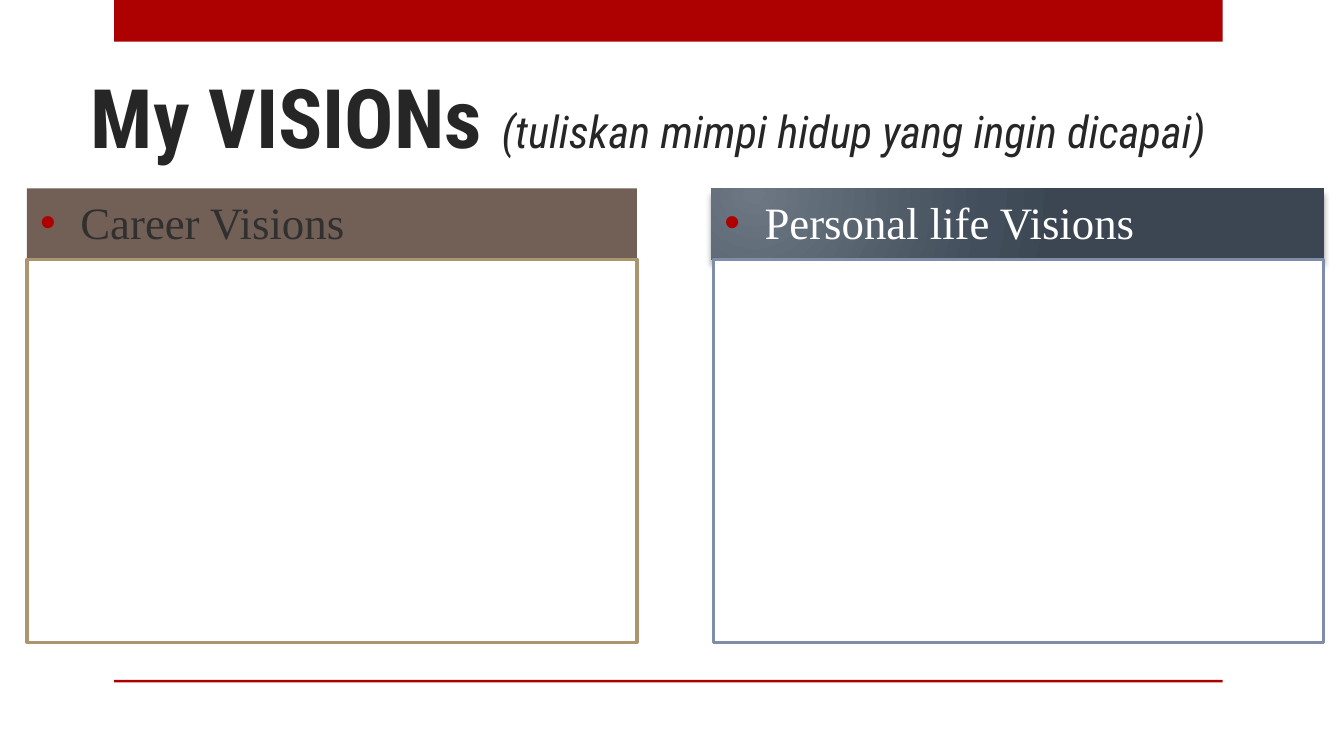
from pptx import Presentation
from pptx.dml.color import RGBColor
from pptx.enum.shapes import MSO_SHAPE as Shape
from pptx.enum.text import MSO_ANCHOR as Anchor, PP_ALIGN as Align
from pptx.oxml import parse_xml
from pptx.oxml.ns import nsdecls
from pptx.util import Cm, Pt

THEME = {
    "accent": "AD0101", "ink": "262626", "paper": "FFFFFF",
    "title_font": "Roboto Condensed", "body_font": "Times New Roman",
    "title_size": 44, "body_size": 24, "border": 1.75,
}

TITLE = [
    ("My VISIONs ", {"size": Pt(THEME["title_size"]), "bold": True}),
    ("(tuliskan mimpi hidup yang ingin dicapai)",
     {"size": Pt(THEME["body_size"]), "italic": True}),
]
COLUMNS = [
    {"heading": "Career Visions", "text": "303030", "fill": "726056",
     "border": "AC956E", "header_left": 0.51, "header_width": 11.53,
     "panel_left": 0.51},
    {"heading": "Personal life Visions", "text": "FFFFFF",
     "gradient": [(0, "6D7784"), (76, "424E5B"), (100, "3B4652")],
     "border": "808DA9", "header_left": 13.44, "header_width": 11.58,
     "panel_left": 13.49},
]

BAND_LEFT, BAND_WIDTH = 2.16, 20.95
BANDS = [(0, 0.79), (12.85, 0.05)]  # top, height
HEADER_TOP, HEADER_HEIGHT = 3.56, 1.34
PANEL_WIDTH, PANEL_HEIGHT = 11.53, 7.24


def color(value):
    return RGBColor.from_string(value)


def add_box(slide, left, top, width, height, fill, border=None):
    box = slide.shapes.add_shape(
        Shape.RECTANGLE, Cm(left), Cm(top), Cm(width), Cm(height))
    box.shadow.inherit = False
    box.fill.solid()
    box.fill.fore_color.rgb = color(fill)
    if border:
        box.line.color.rgb = color(border)
        box.line.width = Pt(THEME["border"])
    else:
        box.line.fill.background()
    return box


def add_span(para, text, font, ink, formats):
    span = para.add_run()
    span.text = text
    span.font.name = font
    span.font.color.rgb = color(ink)
    for name, value in formats.items():
        setattr(span.font, name, value)


def add_bullet(para):
    """Give the paragraph a hanging bullet and a proportional gap above."""
    props = para._p.get_or_add_pPr()
    indent = Cm(0.76)
    props.set("marL", str(indent))
    props.set("indent", str(-indent))
    for xml in (
        '<a:spcBef {}><a:spcPct val="20000"/></a:spcBef>',
        f'<a:buClr {{}}><a:srgbClr val="{THEME["accent"]}"/></a:buClr>',
        '<a:buFont {} typeface="Arial"/>',
        '<a:buChar {} char="•"/>',
    ):
        props.append(parse_xml(xml.format(nsdecls("a"))))


def add_glow_and_shadow(box, stops):
    """Replace the plain fill with a radial gradient and drop a soft shadow."""
    marks = "".join(
        f'<a:gs pos="{place * 1000}"><a:srgbClr val="{value}"/></a:gs>'
        for place, value in stops)
    props = box._element.spPr
    solid = props.find("{*}solidFill")
    props.replace(solid, parse_xml(
        f'<a:gradFill {nsdecls("a")} rotWithShape="1"><a:gsLst>{marks}</a:gsLst>'
        '<a:path path="circle"><a:fillToRect l="15000" t="15000" '
        'r="100000" b="100000"/></a:path></a:gradFill>'))
    props.find("{*}effectLst").append(parse_xml(
        f'<a:outerShdw {nsdecls("a")} blurRad="{Pt(3)}" dist="{Pt(3)}" '
        'dir="5400000" rotWithShape="0"><a:srgbClr val="000000">'
        '<a:alpha val="35000"/></a:srgbClr></a:outerShdw>'))


def add_title(slide):
    frame = slide.shapes.add_textbox(
        Cm(1.47), Cm(0.94), Cm(23.93), Cm(2.21)).text_frame
    frame.word_wrap = True
    frame.vertical_anchor = Anchor.BOTTOM
    frame.margin_bottom = Cm(0.03)
    for text, formats in TITLE:
        add_span(frame.paragraphs[0], text, THEME["title_font"],
                 THEME["ink"], formats)


def add_header(slide, column):
    stops = column.get("gradient")
    box = add_box(slide, column["header_left"], HEADER_TOP,
                  column["header_width"], HEADER_HEIGHT,
                  column.get("fill") or stops[0][1])
    if stops:
        add_glow_and_shadow(box, stops)
    frame = box.text_frame
    frame.word_wrap = True
    frame.vertical_anchor = Anchor.TOP
    para = frame.paragraphs[0]
    para.alignment = Align.LEFT
    add_bullet(para)
    add_span(para, column["heading"], THEME["body_font"], column["text"],
             {"size": Pt(THEME["body_size"])})


def main():
    deck = Presentation()
    deck.slide_width, deck.slide_height = Cm(25.4), Cm(14.29)
    slide = deck.slides.add_slide(deck.slide_layouts[6])
    for top, height in BANDS:
        add_box(slide, BAND_LEFT, top, BAND_WIDTH, height, THEME["accent"])
    add_title(slide)
    for column in COLUMNS:
        add_header(slide, column)
    for column in COLUMNS:
        add_box(slide, column["panel_left"], HEADER_TOP + HEADER_HEIGHT,
                PANEL_WIDTH, PANEL_HEIGHT, THEME["paper"], column["border"])
    deck.save("out.pptx")


if __name__ == "__main__":
    main()
